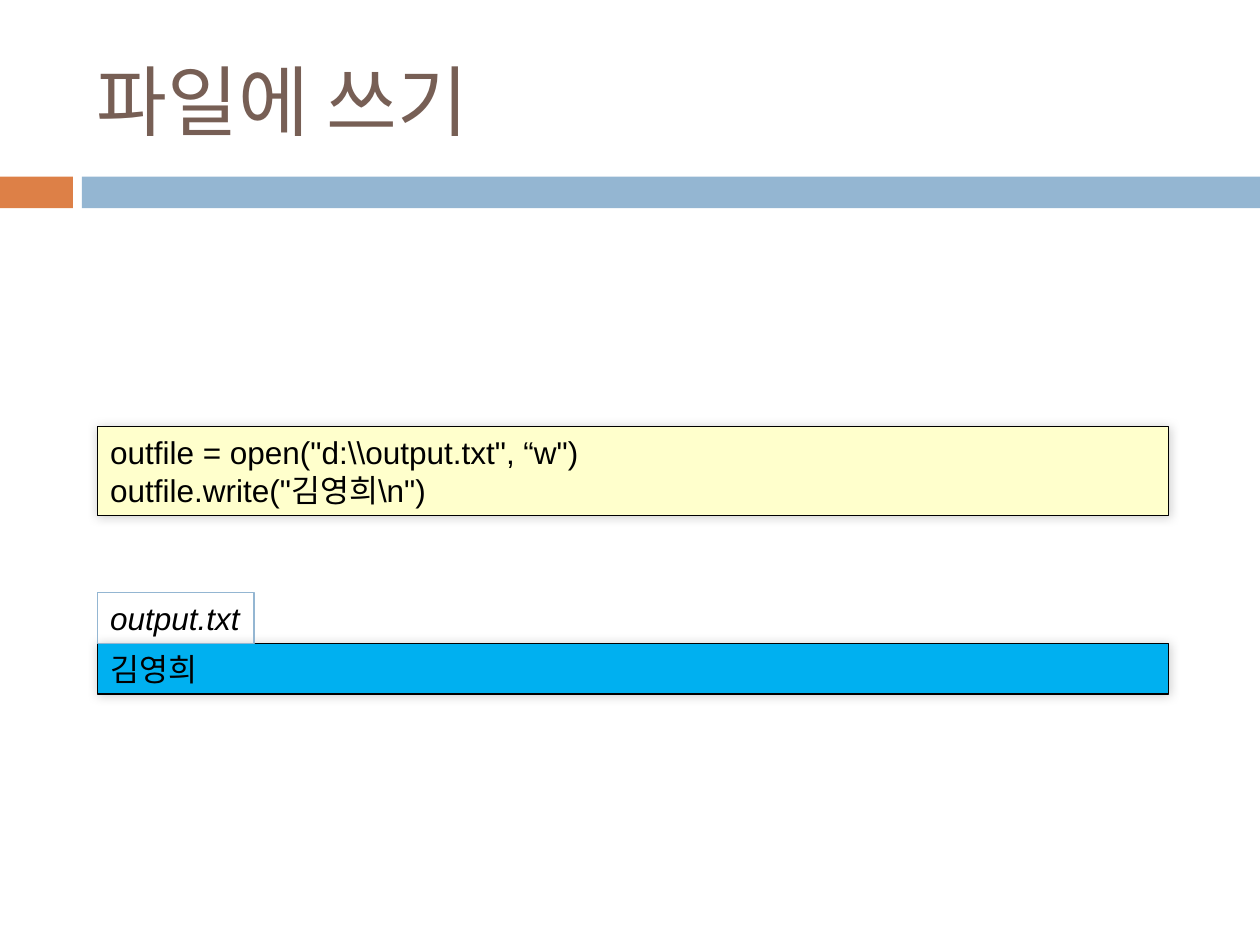
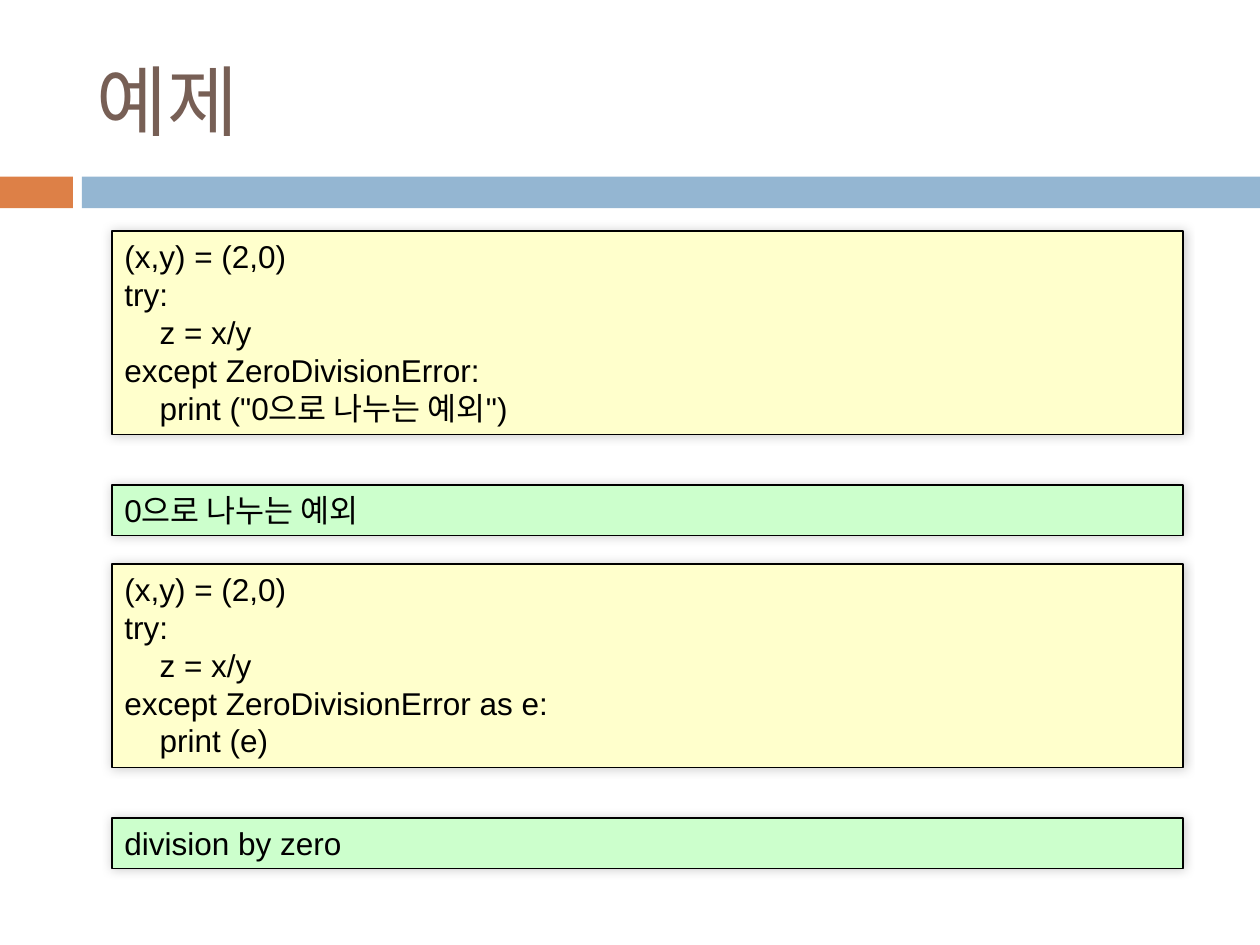
"""Build two slides on writing files and handling exceptions in Python."""
from lxml import etree
from pptx import Presentation, util as u
from pptx.dml.color import RGBColor
from pptx.enum import shapes, text
from pptx.oxml.ns import qn

Cm = u.Cm
COLORS = {
    "orange": "DD8047", "blue": "94B6D2", "title": "775F55", "black": "000000",
    "code": "FFFFCC", "output": "CCFFCC", "file": "00B0F0",
}
BANDS = [("orange", 0, 1.47), ("blue", 1.65, 23.75)]
BAND_TOP, BAND_HEIGHT = 3.56, 0.64
BOX_WIDTH, LINE_HEIGHT, BOX_PADDING = 21.59, 0.77, 0.25
TAB_WIDTH = 3.15
INDENT = 0.71

SLIDES = [
    {
        "title": "파일에 쓰기",
        "left": 1.97,
        "boxes": [
            ("code", 8.6, [(0, 'outfile = open("d:\\\\output.txt", “w")'),
                           (0, 'outfile.write("김영희\\n")')]),
            ("file", 12.97, [(0, "김영희")]),
        ],
        "tab": ("output.txt", 11.95),
    },
    {
        "title": "예제",
        "left": 2.26,
        "boxes": [
            ("code", 4.66, [(0, "(x,y) = (2,0)"), (0, "try:"), (1, "z = x/y"),
                            (0, "except ZeroDivisionError:"),
                            (1, 'print ("0으로 나누는 예외")')]),
            ("output", 9.78, [(0, "0으로 나누는 예외")]),
            ("code", 11.37, [(0, "(x,y) = (2,0)"), (0, "try:"), (1, "z = x/y"),
                             (0, "except ZeroDivisionError as e:"),
                             (1, "print (e)")]),
            ("output", 16.49, [(0, "division by zero")]),
        ],
    },
]


def rgb(name):
    return RGBColor.from_string(COLORS[name])


def write(sp, lines, size=18, font="Arial", color="black", italic=False,
          wrap=True, anchor=text.MSO_ANCHOR.TOP):
    tf = sp.text_frame
    tf.word_wrap = wrap
    tf.vertical_anchor = anchor
    for i, (level, line) in enumerate(lines):
        p = tf.add_paragraph() if i else tf.paragraphs[0]
        p.alignment = text.PP_ALIGN.LEFT
        if level:
            p._p.get_or_add_pPr().set("marL", str(Cm(level * INDENT)))
        r = p.add_run()
        r.text = line
        r.font.size, r.font.name = u.Pt(size), font
        r.font.italic = italic
        r.font.color.rgb = rgb(color)


def add_rect(s, left, top, width, height, fill=None, line=None):
    sp = s.shapes.add_shape(shapes.MSO_SHAPE.RECTANGLE,
                            Cm(left), Cm(top), Cm(width), Cm(height))
    sp.shadow.inherit = False
    if fill:
        sp.fill.solid()
        sp.fill.fore_color.rgb = rgb(fill)
    else:
        sp.fill.background()
    if line:
        sp.line.color.rgb = rgb(line)
        sp.line.width = u.Pt(0.75)
    else:
        sp.line.fill.background()
    return sp


def add_soft_shadow(sp):
    effects = sp._element.spPr.find(qn("a:effectLst"))
    shadow = etree.SubElement(effects, qn("a:outerShdw"), blurRad=str(u.Pt(6)),
                              dist="0", dir=str(315 * 60000), rotWithShape="0")
    color = etree.SubElement(shadow, qn("a:srgbClr"), val=COLORS["black"])
    etree.SubElement(color, qn("a:alpha"), val="20000")


def box_height(lines):
    return BOX_PADDING + LINE_HEIGHT * len(lines)


def add_frame(s, title):
    for color, left, width in BANDS:
        add_rect(s, left, BAND_TOP, width, BAND_HEIGHT, fill=color)
    sp = s.shapes.add_textbox(Cm(1.7), Cm(0.64), Cm(22.66), Cm(2.74))
    write(sp, [(0, title)], size=44, font="Calibri", color="title",
          anchor=text.MSO_ANCHOR.MIDDLE)


def build_slide(prs, content):
    s = prs.slides.add_slide(prs.slide_layouts[6])
    add_frame(s, content["title"])
    for fill, top, lines in content["boxes"]:
        sp = add_rect(s, content["left"], top, BOX_WIDTH, box_height(lines),
                      fill=fill, line="black")
        add_soft_shadow(sp)
        write(sp, lines)
    if "tab" in content:
        name, top = content["tab"]
        lines = [(0, name)]
        sp = add_rect(s, content["left"], top, TAB_WIDTH, box_height(lines), line="blue")
        write(sp, lines, italic=True, wrap=False)


def main():
    prs = Presentation()
    prs.slide_width, prs.slide_height = Cm(25.4), Cm(19.05)
    for content in SLIDES:
        build_slide(prs, content)
    prs.save("out.pptx")


if __name__ == "__main__":
    main()
